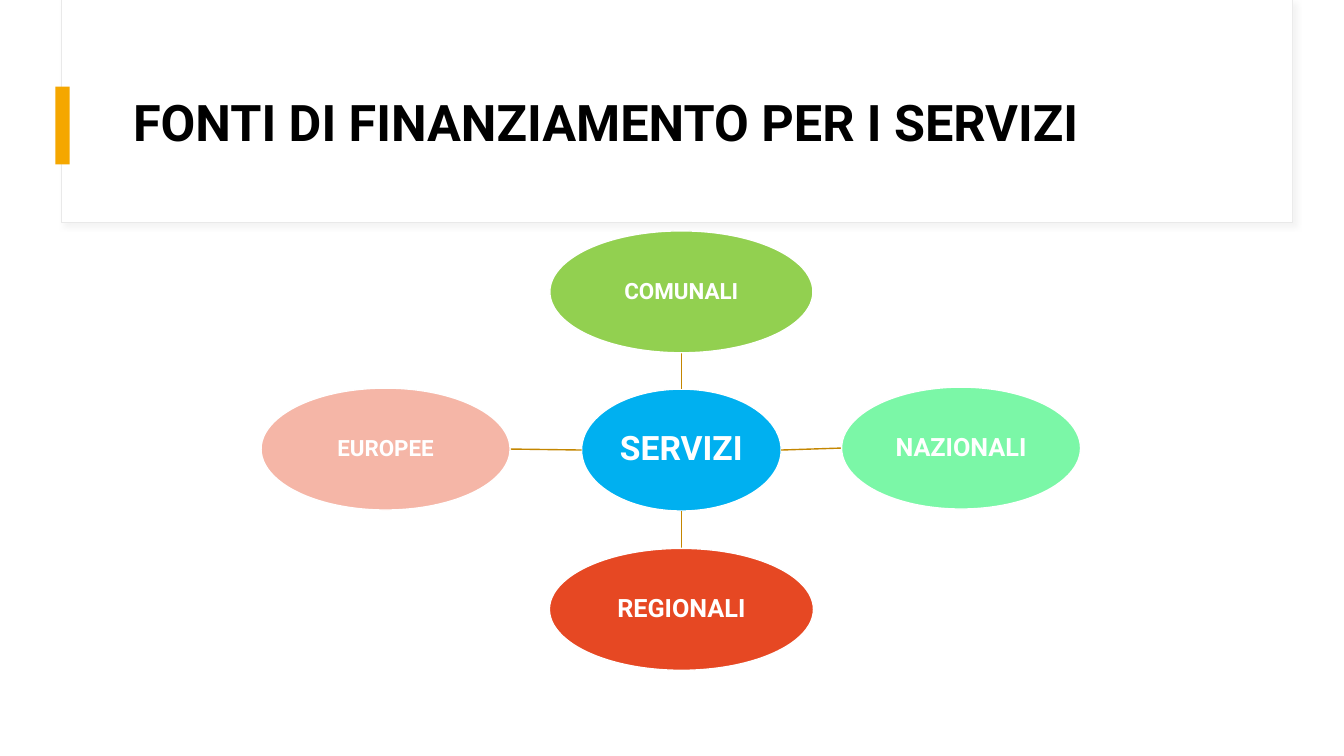
from dataclasses import dataclass

from lxml.etree import SubElement
from pptx import Presentation
from pptx.dml.color import RGBColor
from pptx.enum.shapes import MSO_CONNECTOR as Link, MSO_SHAPE as Shape
from pptx.enum.text import MSO_ANCHOR as Anchor, PP_ALIGN as Align
from pptx.oxml.ns import qn
from pptx.util import Inches, Pt


def color(code):
    return RGBColor.from_string(code)


@dataclass
class Oval:
    label: str
    x: float
    y: float
    width: float
    fill: str
    size: int
    height: float = 16.13

    def side(self, right, down):
        return self.x + right * self.width / 2, self.y + down * self.height / 2


class Sheet:
    font = "Roboto"
    white = "FFFFFF"
    black = "000000"
    amber = "F5A700"
    link = "C48600"
    frame = "E9E9E9"
    shade = "D9D9D9"

    def __init__(self, deck):
        self.deck = deck
        self.page = deck.slides.add_slide(deck.slide_layouts[5])

    def across(self, percent):
        return round(self.deck.slide_width * percent / 100)

    def down(self, percent):
        return round(self.deck.slide_height * percent / 100)

    def area(self, x, y, width, height):
        return self.across(x), self.down(y), self.across(width), self.down(height)

    def shape(self, kind, area, fill, line=None, weight=1):
        box = self.page.shapes.add_shape(kind, *self.area(*area))
        box.shadow.inherit = False
        box.fill.solid()
        box.fill.fore_color.rgb = color(fill)
        if line:
            box.line.color.rgb = color(line)
            box.line.width = Pt(weight)
        else:
            box.line.fill.background()
        return box

    def shadow(self, box):
        effects = box._element.spPr.find(qn("a:effectLst"))
        outer = SubElement(effects, qn("a:outerShdw"), blurRad=str(Pt(4)),
                           dist=str(Pt(3)), dir="2700000", algn="tl", rotWithShape="0")
        tint = SubElement(outer, qn("a:srgbClr"), val=self.shade)
        SubElement(tint, qn("a:alpha"), val="30000")

    def label(self, box, text, size, ink, align):
        frame = box.text_frame
        frame.word_wrap = True
        frame.vertical_anchor = Anchor.MIDDLE
        para = frame.paragraphs[0]
        para.alignment = align
        para.line_spacing = 0.9
        span = para.add_run()
        span.text = text
        span.font.name = self.font
        span.font.size = Pt(size)
        span.font.bold = True
        span.font.color.rgb = color(ink)

    def title(self, text, area):
        box = self.page.shapes.title
        box.left, box.top, box.width, box.height = self.area(*area)
        self.label(box, text, 36, self.black, Align.LEFT)

    def oval(self, item):
        left, top = item.side(-1, -1)
        box = self.shape(Shape.OVAL, (left, top, item.width, item.height), item.fill, self.white)
        frame = box.text_frame
        frame.margin_left = frame.margin_right = Inches(0.01)
        frame.margin_top = frame.margin_bottom = Inches(0.01)
        self.label(box, item.label, item.size, self.white, Align.CENTER)

    def connect(self, start, end):
        line = self.page.shapes.add_connector(
            Link.STRAIGHT, self.across(start[0]), self.down(start[1]),
            self.across(end[0]), self.down(end[1]))
        line.line.color.rgb = color(self.link)
        line.line.width = Pt(1)
        SubElement(line._element.spPr, qn("a:effectLst"))


def main():
    deck = Presentation()
    deck.slide_width, deck.slide_height = Inches(13.33), Inches(7.5)
    sheet = Sheet(deck)

    card = sheet.shape(Shape.RECTANGLE, (4.58, 0, 91.6, 29.47), sheet.white, sheet.frame, 0.75)
    sheet.shadow(card)
    sheet.shape(Shape.RECTANGLE, (4.65, 0, 91.5, 29.33), sheet.white)
    sheet.shape(Shape.RECTANGLE, (4.13, 11.47, 1.05, 10.27), sheet.amber)
    title = sheet.page.shapes.title._element
    card._element.getparent().append(title)
    sheet.title("FONTI DI FINANZIAMENTO PER I SERVIZI", (9.15, 8, 83.42, 17.2))

    hub = Oval("SERVIZI", 50.7, 59.53, 14.85, "00B0F0", 24)
    sources = [
        (Oval("COMUNALI", 50.7, 38.6, 19.58, "92D050", 16), (0, -1)),
        (Oval("NAZIONALI", 71.51, 59.27, 17.78, "7BF7A7", 18), (1, 0)),
        (Oval("REGIONALI", 50.7, 80.6, 19.65, "E64823", 18), (0, 1)),
        (Oval("EUROPEE", 28.69, 59.4, 18.53, "F5B6A7", 16), (-1, 0)),
    ]
    sheet.oval(hub)
    for source, (right, down) in sources:
        sheet.connect(hub.side(right, down), source.side(-right, -down))
        sheet.oval(source)

    deck.save("out.pptx")


if __name__ == "__main__":
    main()
